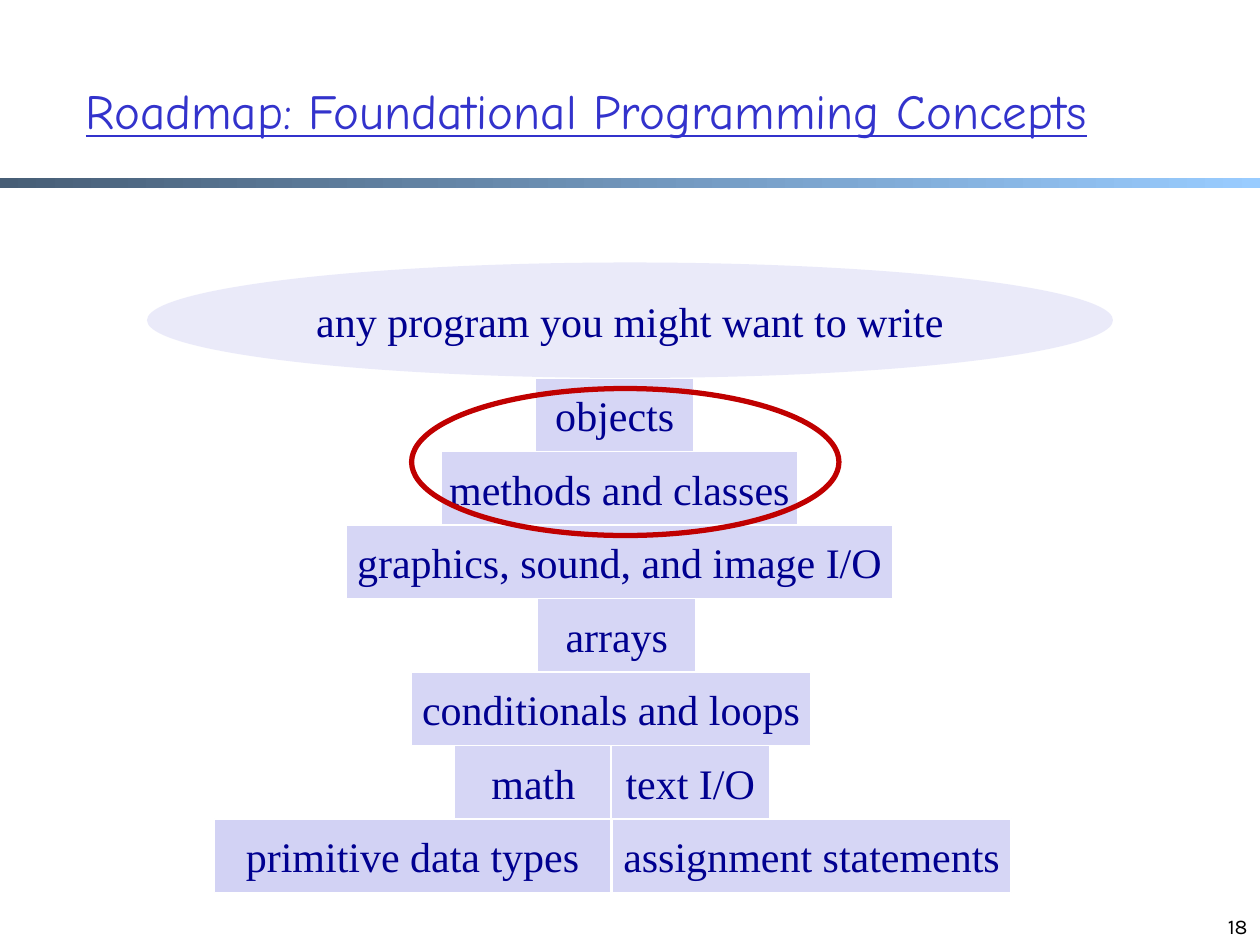
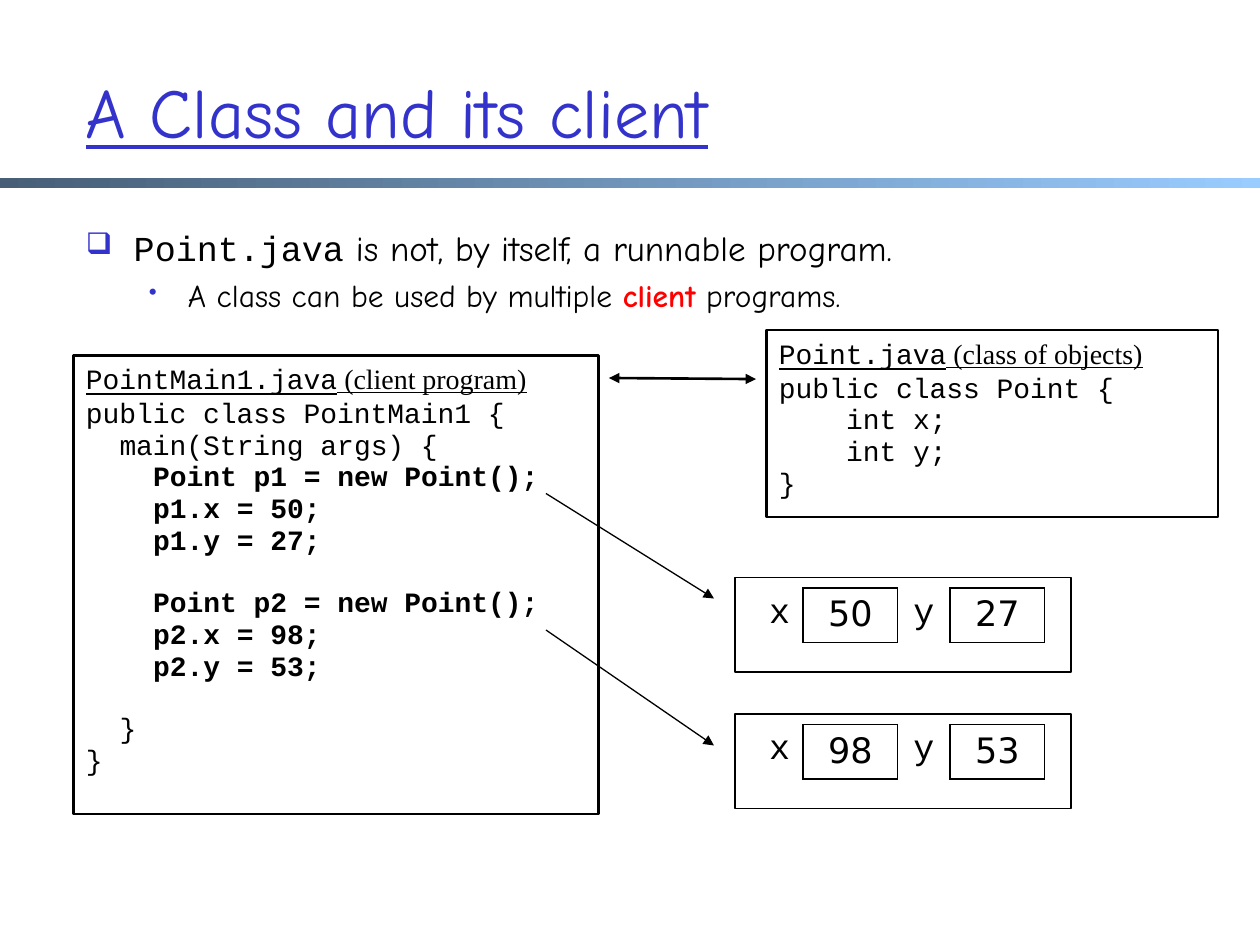
from dataclasses import dataclass

from lxml.etree import SubElement
from pptx import Presentation
from pptx.dml.color import RGBColor
from pptx.enum.shapes import MSO_CONNECTOR, MSO_SHAPE
from pptx.enum.text import MSO_ANCHOR as ANCHOR, PP_ALIGN as ALIGN
from pptx.oxml.ns import qn
from pptx.util import Emu, Inches, Pt


@dataclass(frozen=True)
class Theme:
    title: str = "3333CC"
    band_start: str = "475E76"
    band_end: str = "99CCFF"
    block: str = "D6D6F5"
    base_block: str = "D2D2F4"
    block_text: str = "000090"
    ring: str = "C00000"
    accent: str = "FF0000"
    ink: str = "000000"
    paper: str = "FFFFFF"
    hand: str = "Comic Neue"
    code: str = "Courier New"
    serif: str = "Times New Roman"
    number: str = "DejaVu Sans"
    footer: str = "Karla"
    title_size: int = 40
    long_title_size: int = 28
    block_size: int = 24
    body_size: int = 20
    sub_size: int = 18
    code_size: int = 16
    footer_size: int = 12


T = Theme()
WIDTH, HEIGHT = Inches(10), Inches(7.5)
COLS, ROWS = 120, 90


@dataclass(frozen=True)
class Box:
    """A region measured in columns and rows of the slide grid."""
    x: float
    y: float
    w: float
    h: float

    def inner(self, dx, dy, w, h):
        return Box(self.x + dx, self.y + dy, w, h)

    def emu(self):
        return (*grid_point(self.x, self.y), *grid_point(self.w, self.h))


def grid_point(x, y):
    return Emu(round(x * WIDTH / COLS)), Emu(round(y * HEIGHT / ROWS))


def rgb(color):
    return RGBColor.from_string(color)


def style(run, font, size, color=T.ink, bold=False, underline=False):
    run.font.name, run.font.size = font, Pt(size)
    run.font.bold, run.font.underline = bold, underline
    run.font.color.rgb = rgb(color)


def add_runs(paragraph, *pieces):
    for text, *look in pieces:
        run = paragraph.add_run()
        run.text = text
        style(run, *look)


def add_figure(slide, kind, box, fill=None, line=None, weight=0.75):
    figure = slide.shapes.add_shape(kind, *box.emu())
    figure.shadow.inherit = False
    if fill:
        figure.fill.solid()
        figure.fill.fore_color.rgb = rgb(fill)
    else:
        figure.fill.background()
    if line:
        figure.line.color.rgb = rgb(line)
        figure.line.width = Pt(weight)
    else:
        figure.line.fill.background()
    return figure


def put_text(figure, text, look, align=ALIGN.CENTER, anchor=ANCHOR.MIDDLE, wrap=True):
    frame = figure.text_frame
    frame.word_wrap, frame.vertical_anchor = wrap, anchor
    frame.text = text
    paragraph = frame.paragraphs[0]
    paragraph.alignment = align
    style(paragraph.runs[0], *look)


def indent(paragraph, left, first=0):
    properties = paragraph._p.get_or_add_pPr()
    properties.set("marL", str(Inches(left)))
    properties.set("indent", str(Inches(first)))
    return properties


# Shared regions: title, gradient band, page number
def add_header(slide, title, size, box=Box(7, 3, 109, 15)):
    band = add_figure(slide, MSO_SHAPE.RECTANGLE, Box(0, 16.95, COLS, 1))
    band.fill.gradient()
    band.fill.gradient_angle = 0
    for stop, color in zip(band.fill.gradient_stops, (T.band_start, T.band_end)):
        stop.color.rgb = rgb(color)
    heading = slide.shapes.add_textbox(*box.emu())
    put_text(heading, title, (T.hand, size, T.title, False, True), ALIGN.LEFT)


def add_page_number(slide, number, box=Box(92, 84, 28, 6)):
    page = slide.shapes.add_textbox(*box.emu())
    put_text(page, number, (T.footer, T.footer_size), ALIGN.RIGHT, ANCHOR.BOTTOM)


# Roadmap: blocks stacked under the goal ellipse; each is (column, width, text)
LAYERS = [
    [(37, 15.1, "objects")],
    [(28, 34, "methods and classes")],
    [(19, 52, "graphics, sound, and image I/O")],
    [(37.2, 15.1, "arrays")],
    [(25.2, 38, "conditionals and loops")],
    [(29.3, 15, "math"), (44.2, 15.1, "text I/O")],
    [(44.3, 38, "assignment statements"), (6.4, 37.8, "primitive data types")],
]


def add_tower(slide, box):
    look = (T.serif, T.block_size, T.block_text)
    goal_rows, layer_rows = 11, 7
    for level, layer in enumerate(LAYERS):
        for column, width, text in layer:
            fill = T.base_block if text.startswith("primitive") else T.block
            place = box.inner(column, goal_rows + level * layer_rows, width, layer_rows)
            block = add_figure(slide, MSO_SHAPE.RECTANGLE, place, fill, T.paper)
            put_text(block, text, look, wrap=False)
    goal = add_figure(slide, MSO_SHAPE.OVAL, box.inner(0, 0, box.w, goal_rows), T.block)
    color = goal._element.spPr.find(qn("a:solidFill"))[0]
    SubElement(color, qn("a:alpha"), val="50000")
    put_text(goal, "any program you might want to write", look, wrap=False)
    # Ring around the current topics
    add_figure(slide, MSO_SHAPE.OVAL, box.inner(25.2, 12, 40.7, 14), line=T.ring, weight=3)


# Class and client: bullets
def add_bullet(paragraph, symbol, percent, left, first):
    properties = indent(paragraph, left, first)
    color = SubElement(properties, qn("a:buClr"))
    SubElement(color, qn("a:srgbClr"), val=T.title)
    SubElement(properties, qn("a:buSzPct"), val=str(percent * 1000))
    SubElement(properties, qn("a:buChar"), char=symbol)


def add_points(slide, box):
    frame = slide.shapes.add_textbox(*box.emu()).text_frame
    frame.word_wrap = True
    claim, detail = frame.paragraphs[0], frame.add_paragraph()
    add_runs(claim, ("Point.java", T.code, T.body_size),
             (" is not, by itself, a runnable program.", T.hand, T.body_size))
    add_runs(detail, ("A class can be used by multiple ", T.hand, T.sub_size),
             ("client", T.hand, T.sub_size, T.accent, True),
             (" programs.", T.hand, T.sub_size))
    detail.level = 1
    detail.space_before = Pt(4)
    add_bullet(claim, "❑", 85, 0.38, -0.38)
    add_bullet(detail, "•", 75, 0.81, -0.31)


# Listings: groups of (indent in characters, text, bold), a blank line between groups
CLIENT_CODE = [
    [(0, "public class PointMain1 {", False),
     (2, "main(String args) {", False),
     (4, "Point p1 = new Point();", True),
     (4, "p1.x = 50;", True),
     (4, "p1.y = 27;", True)],
    [(4, "Point p2 = new Point();", True),
     (4, "p2.x = 98;", True),
     (4, "p2.y = 53;", True)],
    [(2, "}", False),
     (0, "}", False)],
]
CLASS_CODE = [
    [(0, "public class Point {", False),
     (4, "int x;", False),
     (4, "int y;", False),
     (0, "}", False)],
]


def add_listing(slide, box, file_name, role, groups):
    line_gap, blank_line = 8.5, 17.6
    char_width = 0.6 * T.code_size / 72
    panel = add_figure(slide, MSO_SHAPE.RECTANGLE, box, line=T.ink, weight=1.5)
    frame = panel.text_frame
    frame.word_wrap, frame.vertical_anchor = True, ANCHOR.TOP
    caption = frame.paragraphs[0]
    caption.alignment = ALIGN.LEFT
    add_runs(caption, (file_name, T.code, T.code_size, T.ink, False, True),
             (f" ({role})", T.serif, T.code_size, T.ink, False, True))
    for group_index, group in enumerate(groups):
        for line_index, (depth, text, bold) in enumerate(group):
            starts_group = group_index > 0 and line_index == 0
            code_line = frame.add_paragraph()
            code_line.text = text
            style(code_line.runs[0], T.code, T.code_size, bold=bold)
            code_line.alignment = ALIGN.LEFT
            code_line.line_spacing = 0.5
            code_line.space_before = Pt(line_gap + blank_line * starts_group)
            indent(code_line, depth * char_width)


# Point objects: a frame holding a row of named fields
def add_borders(cell, sides):
    properties = cell._tc.get_or_add_tcPr()
    for index, side in enumerate(sides):
        edge = properties.makeelement(qn(f"a:ln{side}"), {"w": str(Pt(1))})
        fill = SubElement(edge, qn("a:solidFill"))
        SubElement(fill, qn("a:srgbClr"), val=T.ink)
        properties.insert(index, edge)


def add_point_object(slide, box, x, y):
    add_figure(slide, MSO_SHAPE.RECTANGLE, box, line=T.ink)
    widths = (4.5, 9, 5, 9)
    place = box.inner(2, 1, sum(widths), 5.2)
    fields = slide.shapes.add_table(1, len(widths), *place.emu()).table
    fields.first_row = fields.horz_banding = False
    contents = (("x", T.code, "R"), (x, T.number, "LRTB"),
                ("y", T.code, "LR"), (y, T.number, "LRTB"))
    for column, (width, (text, font, sides)) in enumerate(zip(widths, contents)):
        fields.columns[column].width = grid_point(width, 0)[0]
        cell = fields.cell(0, column)
        cell.fill.background()
        cell.text = text
        value = cell.text_frame.paragraphs[0]
        value.alignment = ALIGN.CENTER
        style(value.runs[0], font, T.body_size)
        add_borders(cell, sides)


def add_arrow(slide, start, end, weight=0.75, ends=("tailEnd",)):
    arrow = slide.shapes.add_connector(
        MSO_CONNECTOR.STRAIGHT, *grid_point(*start), *grid_point(*end))
    arrow.line.color.rgb = rgb(T.ink)
    arrow.line.width = Pt(weight)
    line = arrow._element.spPr.find(qn("a:ln"))
    for tip in ends:
        SubElement(line, qn(f"a:{tip}"), type="triangle")
    SubElement(arrow._element.spPr, qn("a:effectLst"))


def build_roadmap(slide):
    add_header(slide, "Roadmap: Foundational Programming Concepts", T.long_title_size)
    add_page_number(slide, "18")
    add_tower(slide, Box(14, 25, 92, 60))


def build_class_and_client(slide):
    add_header(slide, "A Class and its client", T.title_size)
    add_points(slide, Box(7, 21, 102, 10))
    add_listing(slide, Box(7, 33.84, 50, 43.7), "PointMain1.java", "client program", CLIENT_CODE)
    add_listing(slide, Box(73, 31.44, 43, 17.8), "Point.java", "class of objects", CLASS_CODE)
    add_point_object(slide, Box(70, 55, 32, 9), "50", "27")
    add_point_object(slide, Box(70, 68, 32, 9), "98", "53")
    add_arrow(slide, (58, 36), (72, 36.1), 1.5, ("headEnd", "tailEnd"))
    add_arrow(slide, (52, 47), (68, 57))
    add_arrow(slide, (52, 60), (68, 71))


def main():
    deck = Presentation()
    deck.slide_width, deck.slide_height = WIDTH, HEIGHT
    blank = deck.slide_layouts[6]
    for build in (build_roadmap, build_class_and_client):
        build(deck.slides.add_slide(blank))
    deck.save("out.pptx")


if __name__ == "__main__":
    main()
